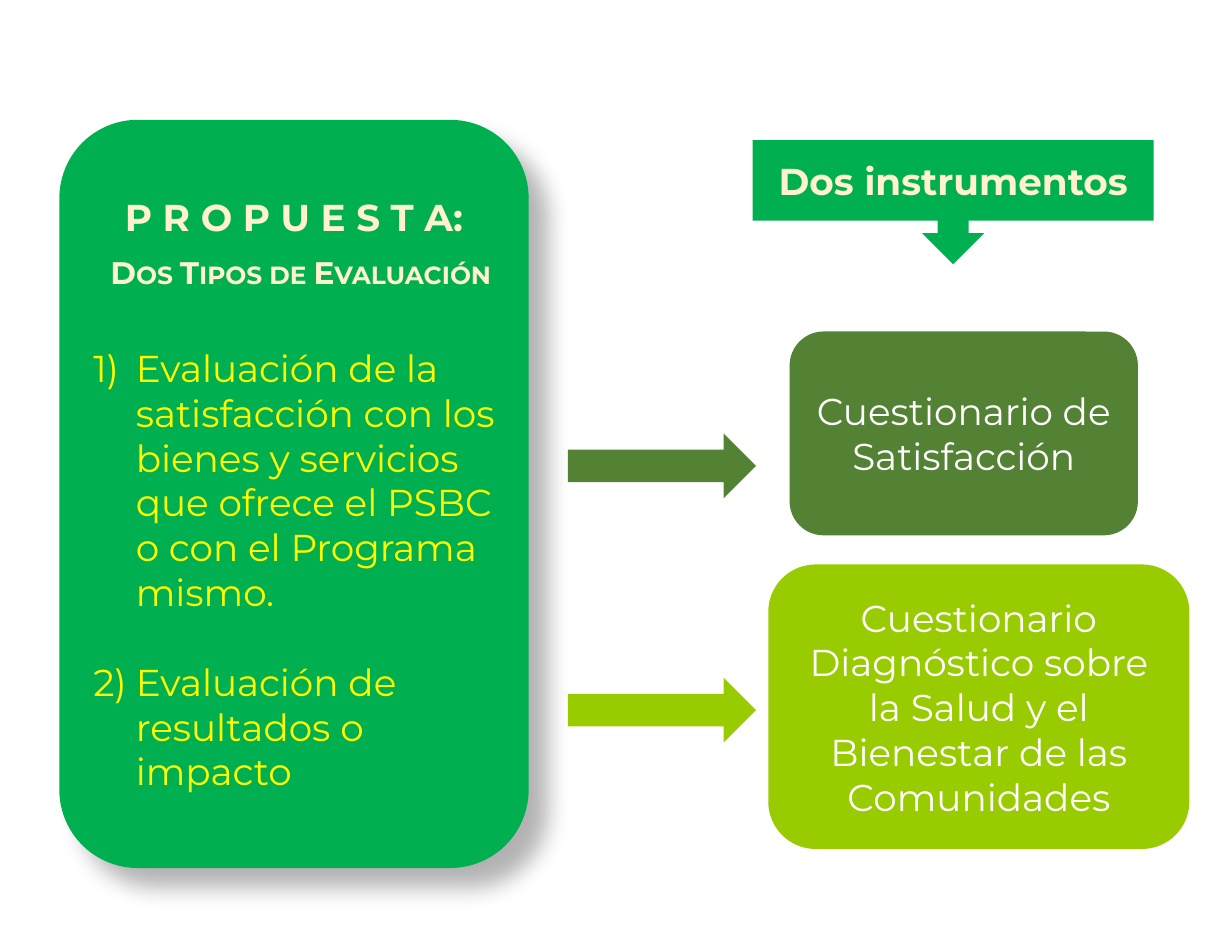
from lxml import etree
from pptx import Presentation
from pptx.dml.color import RGBColor
from pptx.enum.shapes import MSO_SHAPE
from pptx.enum.text import MSO_ANCHOR, PP_ALIGN
from pptx.oxml.ns import qn
from pptx.util import Inches, Pt

ROUND = MSO_SHAPE.ROUNDED_RECTANGLE
ARROW = MSO_SHAPE.RIGHT_ARROW
CALLOUT = MSO_SHAPE.DOWN_ARROW_CALLOUT
CENTER, LEFT = PP_ALIGN.CENTER, PP_ALIGN.LEFT
MIDDLE = MSO_ANCHOR.MIDDLE

COLS, ROWS = 110, 85
CELL = Inches(0.1)
FONT = "Montserrat"
GREEN, OLIVE, LIME = "00B050", "548235", "99CC00"
CREAM, YELLOW, WHITE = "FFF2CC", "FFFF00", "FFFFFF"


def rgb(color):
    return RGBColor.from_string(color)


def add_box(slide, kind, box, fill):
    """Place a borderless shape; box is left, top, width, height in grid cells."""
    sp = slide.shapes.add_shape(kind, *(round(n * CELL) for n in box))
    sp.shadow.inherit = False
    sp.fill.solid()
    sp.fill.fore_color.rgb = rgb(fill)
    sp.line.fill.background()
    sp.text_frame.word_wrap = True
    sp.text_frame.vertical_anchor = MIDDLE
    return sp


def add_text(sp, text, size=24, color=WHITE, bold=False, align=CENTER,
             before=0, margin=0, numbered=False, small_caps=False):
    """Write text into the first empty paragraph, or into a new one."""
    tf = sp.text_frame
    p = tf.add_paragraph() if tf.text else tf.paragraphs[0]
    p.alignment = align
    p.space_before = Pt(before)
    pPr = p._p.get_or_add_pPr()
    pPr.set("marL", str(Inches(margin)))
    if numbered:
        pPr.set("indent", str(-Inches(margin)))
        etree.SubElement(pPr, qn("a:buFont"), typeface="+mj-lt")
        etree.SubElement(pPr, qn("a:buAutoNum"), type="arabicParenR")
    r = p.add_run()
    r.text = text
    r.font.name = FONT
    r.font.size = Pt(size)
    r.font.bold = bold
    r.font.color.rgb = rgb(color)
    if small_caps:
        r._r.get_or_add_rPr().set("cap", "small")


def add_shadow(sp, color="000000", opacity=30, blur=15, distance=18, angle=45):
    effects = sp._element.spPr.find(qn("a:effectLst"))
    shadow = etree.SubElement(
        effects, qn("a:outerShdw"), blurRad=str(Pt(blur)),
        dist=str(Pt(distance)), dir=str(angle * 60000), algn="tl",
        rotWithShape="0")
    clr = etree.SubElement(shadow, qn("a:srgbClr"), val=color)
    etree.SubElement(clr, qn("a:alpha"), val=str(opacity * 1000))


def proposal_panel(slide, box):
    sp = add_box(slide, ROUND, box, GREEN)
    add_shadow(sp)
    add_text(sp, "P R O P U E S T A:", color=CREAM, bold=True)
    add_text(sp, "Dos Tipos de Evaluación", size=20, color=CREAM, bold=True,
             before=9, margin=0.12, small_caps=True)
    items = [
        ("Evaluación de la satisfacción con los bienes y servicios que "
         "ofrece el PSBC o con el Programa mismo.", 35),
        ("Evaluación de resultados o impacto", 29),
    ]
    for text, before in items:
        add_text(sp, text, color=YELLOW, align=LEFT, before=before,
                 margin=0.38, numbered=True)


def instruments_header(slide, box):
    sp = add_box(slide, CALLOUT, box, GREEN)
    add_text(sp, "Dos instrumentos", color=CREAM, bold=True)


def questionnaire(slide, box, arrow_top, text, fill):
    """An arrow from the panel and the instrument that it leads to."""
    add_box(slide, ARROW, (50.7, arrow_top, 16.8, 5.8), fill)
    add_text(add_box(slide, ROUND, box, fill), text)


def main():
    prs = Presentation()
    prs.slide_width, prs.slide_height = COLS * CELL, ROWS * CELL
    slide = prs.slides.add_slide(prs.slide_layouts[6])
    proposal_panel(slide, (5.3, 10.7, 41.9, 66.8))
    questionnaire(slide, (70.5, 29.6, 31.1, 18.2), 38.7,
                  "Cuestionario de Satisfacción", OLIVE)
    questionnaire(slide, (68.6, 50.4, 37.6, 25.4), 60.5,
                  "Cuestionario Diagnóstico sobre la Salud y el Bienestar "
                  "de las Comunidades", LIME)
    instruments_header(slide, (67.2, 12.5, 35.8, 11.1))
    prs.save("out.pptx")


if __name__ == "__main__":
    main()
